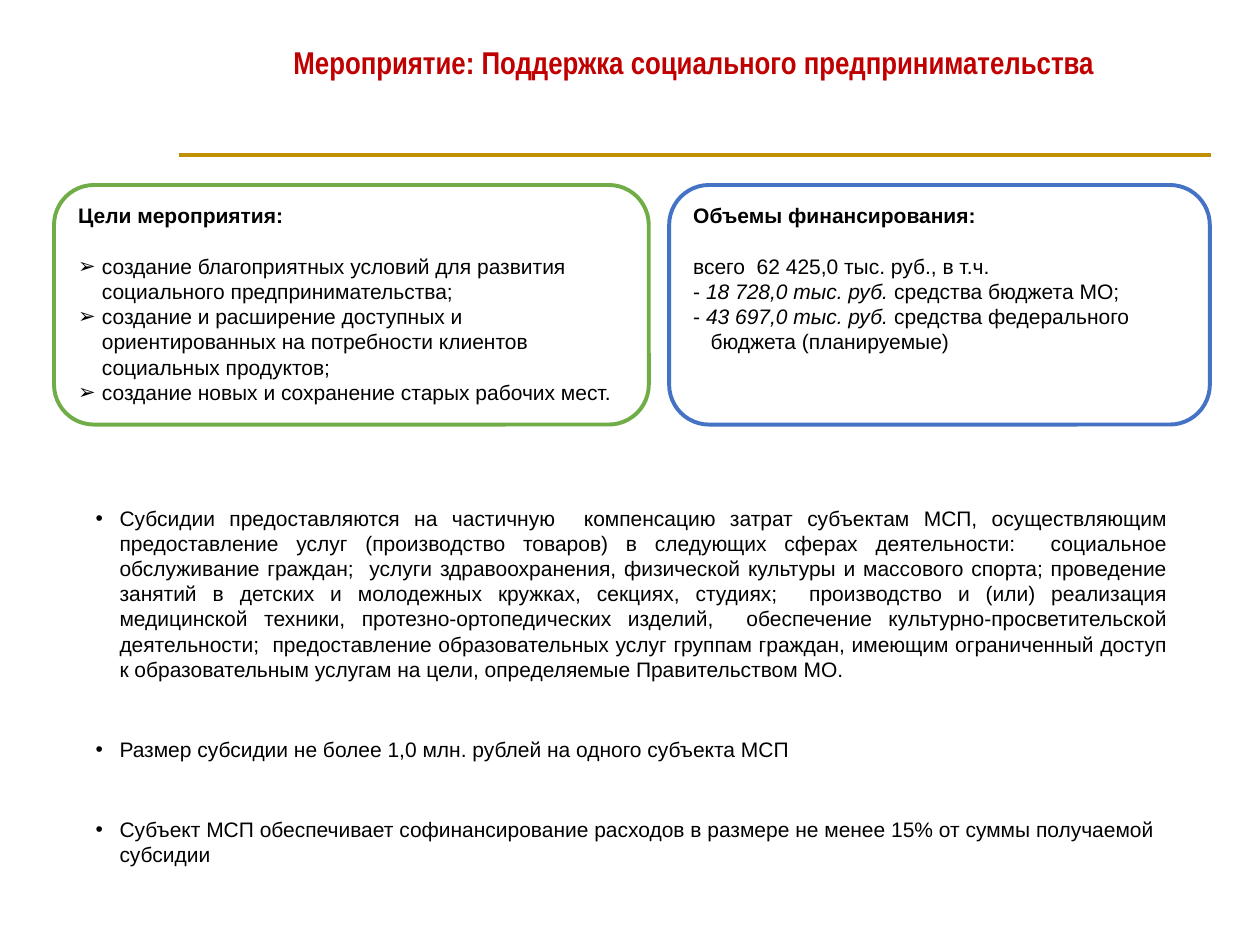
"""Builds the slide on support for social entrepreneurship."""
from dataclasses import dataclass
from typing import Optional

from lxml.etree import SubElement
from pptx import Presentation
from pptx.dml.color import RGBColor
from pptx.enum.shapes import MSO_CONNECTOR, MSO_SHAPE
from pptx.enum.text import MSO_ANCHOR, PP_ALIGN
from pptx.oxml.ns import qn
from pptx.util import Cm, Pt

BLACK = RGBColor(0x00, 0x00, 0x00)
WHITE = RGBColor(0xFF, 0xFF, 0xFF)
RED = RGBColor(0xC0, 0x00, 0x00)
GOLD = RGBColor(0xBF, 0x90, 0x00)
GREEN = RGBColor(0x70, 0xAD, 0x47)
BLUE = RGBColor(0x44, 0x72, 0xC4)

HANGING = 0.48
CARD_TOP, CARD_HEIGHT = 3.73, 4.83
NOTE_LEFT = 1.68


@dataclass(frozen=True)
class Item:
    before: str
    italic: str = ""
    after: str = ""
    bullet: str = ""
    indent: float = 0


@dataclass(frozen=True)
class Card:
    left: float
    width: float
    color: RGBColor
    heading: str
    items: tuple[Item, ...]


@dataclass(frozen=True)
class Note:
    top: float
    width: float
    height: float
    text: str
    align: PP_ALIGN = PP_ALIGN.LEFT


def style_run(run, size: float = 12, face: str = "Arial", color: RGBColor = BLACK,
              bold: bool = False, italic: bool = False) -> None:
    """Format one run."""
    run.font.size = Pt(size)
    run.font.name = face
    run.font.color.rgb = color
    run.font.bold = bold
    run.font.italic = italic


def set_indent(paragraph, left: float, bullet: str = "") -> None:
    """Indent a paragraph and hang its bullet, if any."""
    properties = paragraph._p.get_or_add_pPr()
    properties.set("marL", str(Cm(left)))
    if bullet:
        properties.set("indent", str(-Cm(left)))
        SubElement(properties, qn("a:buFont")).set("typeface", "Arial")
        SubElement(properties, qn("a:buChar")).set("char", bullet)


def add_text(slide, left: float, top: float, width: float, height: float, text: str,
             align: Optional[PP_ALIGN] = None):
    """Add a wrapped text box and return its paragraph."""
    frame = slide.shapes.add_textbox(Cm(left), Cm(top), Cm(width), Cm(height)).text_frame
    frame.word_wrap = True
    frame.text = text
    paragraph = frame.paragraphs[0]
    paragraph.alignment = align
    return paragraph


def add_title(slide, text: str) -> None:
    """Draw the title and the rule below it."""
    rule = slide.shapes.add_connector(
        MSO_CONNECTOR.STRAIGHT, Cm(3.61), Cm(3.12), Cm(24.41), Cm(3.12))
    rule.line.color.rgb = GOLD
    rule.line.width = Pt(2.25)
    SubElement(rule._element.spPr, qn("a:effectLst"))
    title = add_text(slide, 5.05, 0.74, 17.88, 1.02, text, PP_ALIGN.CENTER)
    style_run(title.runs[0], 18, "Arial Narrow", RED, bold=True)


def add_card(slide, card: Card) -> None:
    """Draw a rounded card with a heading and its items."""
    shape = slide.shapes.add_shape(
        MSO_SHAPE.ROUNDED_RECTANGLE, Cm(card.left), Cm(CARD_TOP), Cm(card.width), Cm(CARD_HEIGHT))
    shape.shadow.inherit = False
    shape.fill.solid()
    shape.fill.fore_color.rgb = WHITE
    shape.line.color.rgb = card.color
    shape.line.width = Pt(2.25)
    frame = shape.text_frame
    frame.word_wrap = True
    frame.vertical_anchor = MSO_ANCHOR.TOP
    frame.text = card.heading
    heading = frame.paragraphs[0]
    heading.alignment = PP_ALIGN.LEFT
    heading.space_after = Pt(14.4)
    style_run(heading.runs[0], bold=True)
    for item in card.items:
        paragraph = frame.add_paragraph()
        paragraph.alignment = PP_ALIGN.LEFT
        set_indent(paragraph, item.indent, item.bullet)
        for part, italic in ((item.before, False), (item.italic, True), (item.after, False)):
            if part:
                run = paragraph.add_run()
                run.text = part
                style_run(run, italic=italic)


def add_note(slide, note: Note) -> None:
    """Draw one bulleted note."""
    paragraph = add_text(slide, NOTE_LEFT, note.top, note.width, note.height, note.text, note.align)
    set_indent(paragraph, HANGING, "•")
    style_run(paragraph.runs[0])


GOALS = (
    "создание благоприятных условий для развития социального предпринимательства;",
    "создание и расширение доступных и ориентированных на потребности клиентов "
    "социальных продуктов;",
    "создание новых и сохранение старых рабочих мест.",
)

CARDS = (
    Card(1.09, 11.99, GREEN, "Цели мероприятия:",
         tuple(Item(goal, bullet="➢", indent=HANGING) for goal in GOALS)),
    Card(13.49, 10.9, BLUE, "Объемы финансирования:", (
        Item("всего  62 425,0 тыс. руб., в т.ч."),
        Item("- ", "18 728,0 тыс. руб. ", "средства бюджета МО;"),
        Item("- ", "43 697,0 тыс. руб.", " средства федерального"),
        Item("бюджета (планируемые)", indent=0.35),
    )),
)

NOTES = (
    Note(10.06, 22.12, 3.84,
         "Субсидии предоставляются на частичную  компенсацию затрат субъектам МСП, "
         "осуществляющим предоставление услуг (производство товаров) в следующих сферах "
         "деятельности:  социальное обслуживание граждан;  услуги здравоохранения, физической "
         "культуры и массового спорта; проведение занятий в детских и молодежных кружках, "
         "секциях, студиях;  производство и (или) реализация медицинской техники, "
         "протезно-ортопедических изделий,  обеспечение культурно-просветительской "
         "деятельности;  предоставление образовательных услуг группам граждан, имеющим "
         "ограниченный доступ к образовательным услугам на цели, определяемые "
         "Правительством МО.", PP_ALIGN.JUSTIFY),
    Note(14.73, 21.79, 0.76, "Размер субсидии не более 1,0 млн. рублей на одного субъекта МСП"),
    Note(16.33, 22.73, 1.27,
         "Субъект МСП обеспечивает софинансирование расходов в размере не менее 15% "
         "от суммы получаемой субсидии"),
)


def main() -> None:
    """Assemble and save the slide."""
    deck = Presentation()
    deck.slide_width, deck.slide_height = Cm(25.4), Cm(19.05)
    slide = deck.slides.add_slide(deck.slide_layouts[6])
    add_title(slide, "Мероприятие: Поддержка социального предпринимательства")
    for card in CARDS:
        add_card(slide, card)
    for note in NOTES:
        add_note(slide, note)
    deck.save("out.pptx")


if __name__ == "__main__":
    main()
